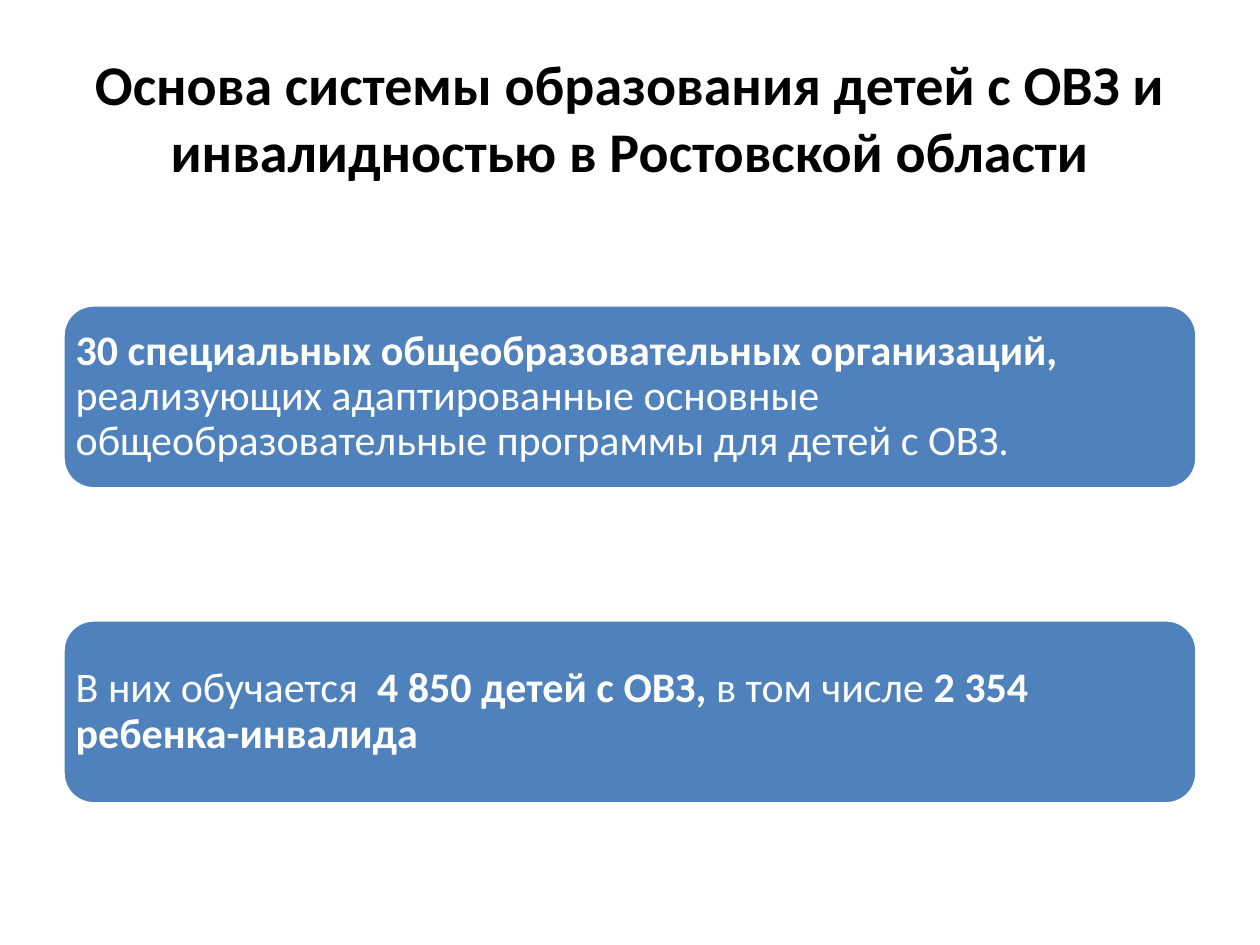
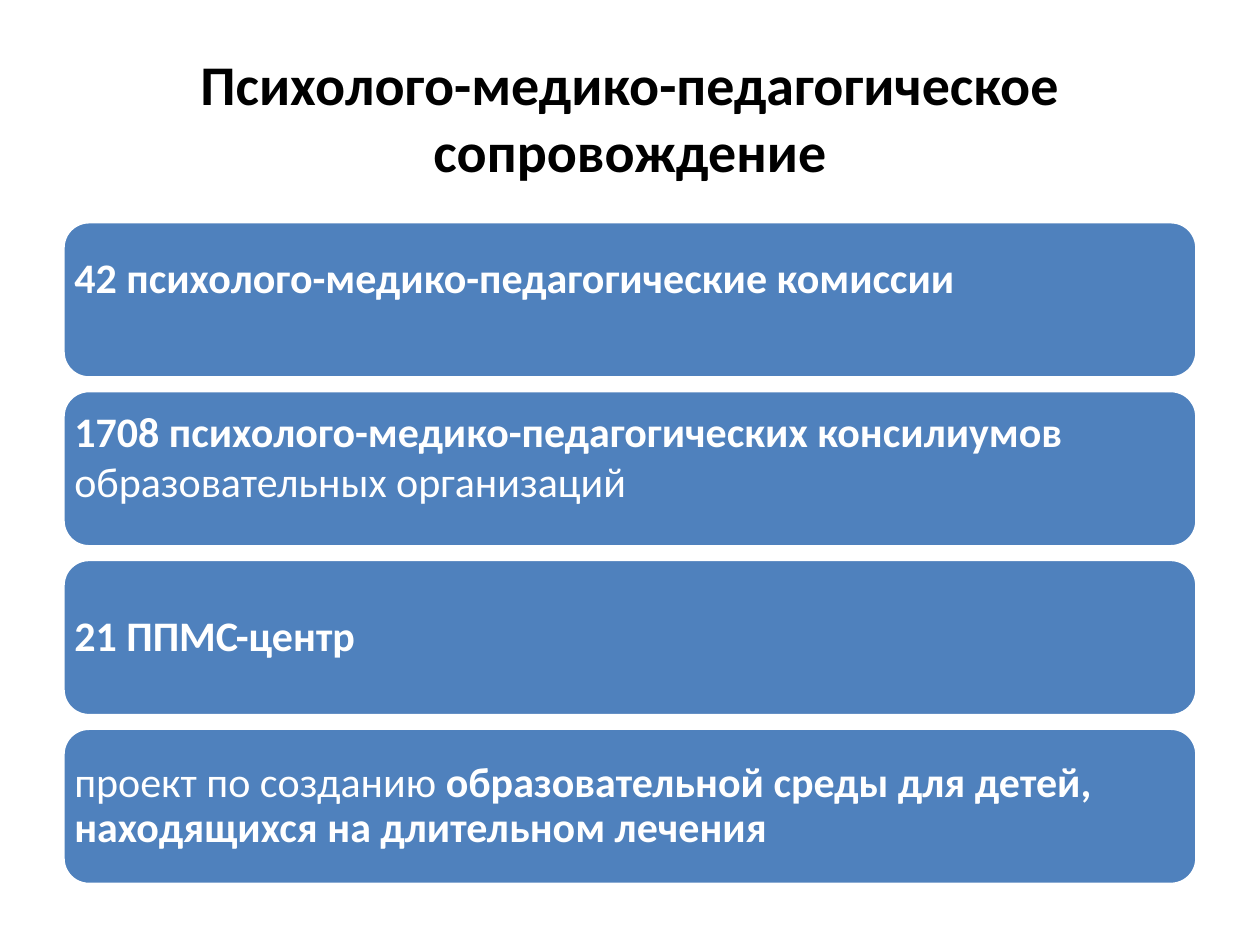
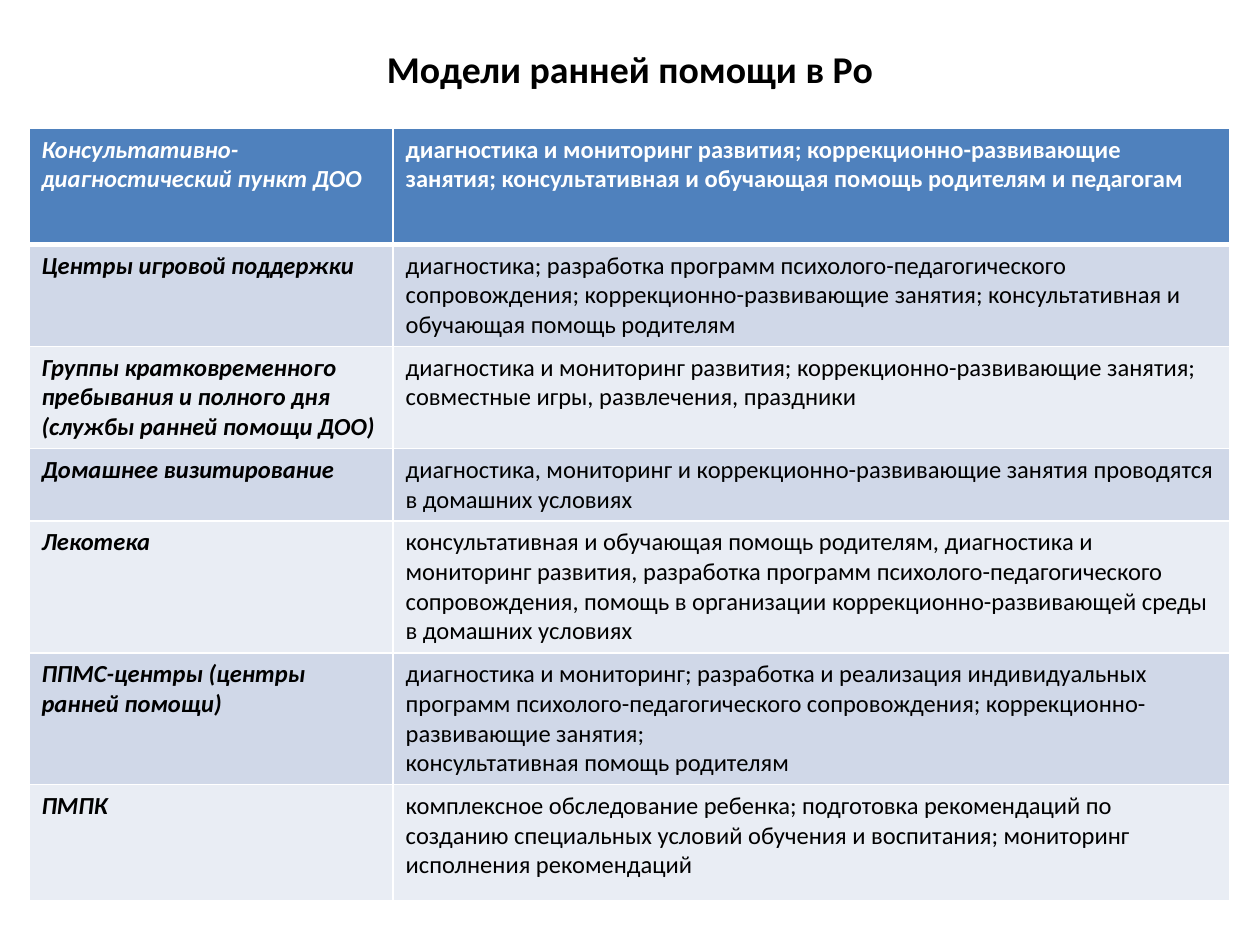
"""Three slides on schooling and early help for children with special needs."""
from pptx import Presentation, util as u
from pptx.dml.color import RGBColor
from pptx.enum import shapes, text
from pptx.oxml import parse_xml
from pptx.oxml.ns import nsdecls

FONT, BLUE, WHITE, BLACK = "Calibri", "4F81BD", "FFFFFF", "000000"
BANDS = ["E9EDF4", "D0D8E8"]

deck = Presentation()
deck.slide_width, deck.slide_height = u.Inches(10), u.Inches(7.5)


def style(run, size, tint, bold=False, slant=False):
    """Give a run its font."""
    font = run.font
    font.name, font.size = FONT, u.Pt(size)
    font.bold, font.italic = bold, slant
    font.color.rgb = RGBColor.from_string(tint)


def start(title, size=32, high=1.25):
    """Add a slide with its title."""
    slide = deck.slides.add_slide(deck.slide_layouts[5])
    head = slide.shapes.title
    head.left, head.top = u.Inches(0.5), u.Inches(0.3)
    head.width, head.height = u.Inches(9), u.Inches(high)
    frame = head.text_frame
    frame.text = title
    frame.auto_size = text.MSO_AUTO_SIZE.NONE
    frame.vertical_anchor = text.MSO_ANCHOR.MIDDLE
    frame.paragraphs[0].alignment = text.PP_ALIGN.CENTER
    style(frame.paragraphs[0].runs[0], size, BLACK, True)
    return slide


# Each box is its extra space at the foot and its words, bold between stars.
panels = [
    ("Основа системы образования детей с ОВЗ и инвалидностью в Ростовской области",
     2.42, 2.5, 1.46, [
         (0, "*30 специальных общеобразовательных организаций, *реализующих "
             "адаптированные основные общеобразовательные программы для детей с ОВЗ."),
         (0, "В них обучается  *4 850 детей с ОВЗ, *в том числе* 2 354 ребенка-инвалида"),
     ]),
    ("Психолого-медико-педагогическое сопровождение",
     1.76, 1.34, 1.24, [
         (0.37, "*42 психолого-медико-педагогические комиссии"),
         (0.21, "*1708 психолого-медико-педагогических консилиумов* "
                "образовательных организаций"),
         (0, "*21 ППМС-центр"),
         (0, "проект по созданию *образовательной среды для детей, "
             "находящихся на длительном лечения"),
     ]),
]
for title, top, step, high, boxes in panels:
    slide = start(title)
    for row, (foot, words) in enumerate(boxes):
        box = slide.shapes.add_shape(
            shapes.MSO_SHAPE.ROUNDED_RECTANGLE, u.Inches(0.5),
            u.Inches(top + row * step), u.Inches(9), u.Inches(high))
        box.shadow.inherit = False
        box.fill.solid()
        box.fill.fore_color.rgb = RGBColor.from_string(BLUE)
        box.line.color.rgb = RGBColor.from_string(WHITE)
        box.line.width = u.Pt(2)
        frame = box.text_frame
        frame.word_wrap = True
        frame.vertical_anchor = text.MSO_ANCHOR.MIDDLE
        frame.margin_left = frame.margin_right = u.Inches(0.03)
        frame.margin_top, frame.margin_bottom = u.Inches(0.03), u.Inches(0.03 + foot)
        para = frame.paragraphs[0]
        para.alignment = text.PP_ALIGN.LEFT
        para.line_spacing = 1.0 if foot else 0.9
        for part, piece in enumerate(words.split("*")):
            if piece:
                run = para.add_run()
                run.text = piece
                style(run, 24, WHITE, part % 2 == 1)

models = [
    (0.92, "Консультативно-диагностический пункт ДОО",
     "диагностика и мониторинг развития; коррекционно-развивающие занятия; "
     "консультативная и обучающая помощь родителям и педагогам"),
    (0.79, "Центры игровой поддержки",
     "диагностика; разработка программ психолого-педагогического сопровождения; "
     "коррекционно-развивающие занятия; консультативная и обучающая помощь родителям"),
    (0.78, "Группы кратковременного пребывания и полного дня\n(службы ранней помощи ДОО)",
     "диагностика и мониторинг развития; коррекционно-развивающие занятия; "
     "совместные игры, развлечения, праздники"),
    (0.56, "Домашнее визитирование",
     "диагностика, мониторинг и коррекционно-развивающие занятия проводятся "
     "в домашних условиях"),
    (1.02, "Лекотека",
     "консультативная и обучающая помощь родителям, диагностика и мониторинг развития, "
     "разработка программ психолого-педагогического сопровождения, помощь в организации "
     "коррекционно-развивающей среды в домашних условиях"),
    (1.02, "ППМС-центры (центры ранней помощи)",
     "диагностика и мониторинг; разработка и реализация индивидуальных программ "
     "психолого-педагогического сопровождения; коррекционно-развивающие занятия;\n"
     "консультативная помощь родителям"),
    (0.92, "ПМПК",
     "комплексное обследование ребенка; подготовка рекомендаций по созданию специальных "
     "условий обучения и воспитания; мониторинг исполнения рекомендаций"),
]
slide = start("Модели ранней помощи в Ро", 21.6, 0.48)
table = slide.shapes.add_table(
    len(models), 2, u.Inches(0.23), u.Inches(1.02), u.Inches(9.53), u.Inches(6.01)).table
table.columns[0].width, table.columns[1].width = u.Inches(2.89), u.Inches(6.64)
for row, (high, *words) in enumerate(models):
    table.rows[row].height = u.Inches(high)
    for col, word in enumerate(words):
        cell = table.cell(row, col)
        cell.text = word
        for para in cell.text_frame.paragraphs:
            for run in para.runs:
                style(run, 14, BLACK if row else WHITE, row == 0 or col == 0, col == 0)
        for side in "LRTB":
            thick = 3 if (row, side) in [(0, "B"), (1, "T")] else 1
            cell._tc.get_or_add_tcPr().append(parse_xml(
                f'<a:ln{side} {nsdecls("a")} w="{u.Pt(thick)}"><a:solidFill>'
                f'<a:srgbClr val="{WHITE}"/></a:solidFill></a:ln{side}>'))
        cell.fill.solid()
        cell.fill.fore_color.rgb = RGBColor.from_string(BANDS[row % 2] if row else BLUE)

deck.save("out.pptx")
